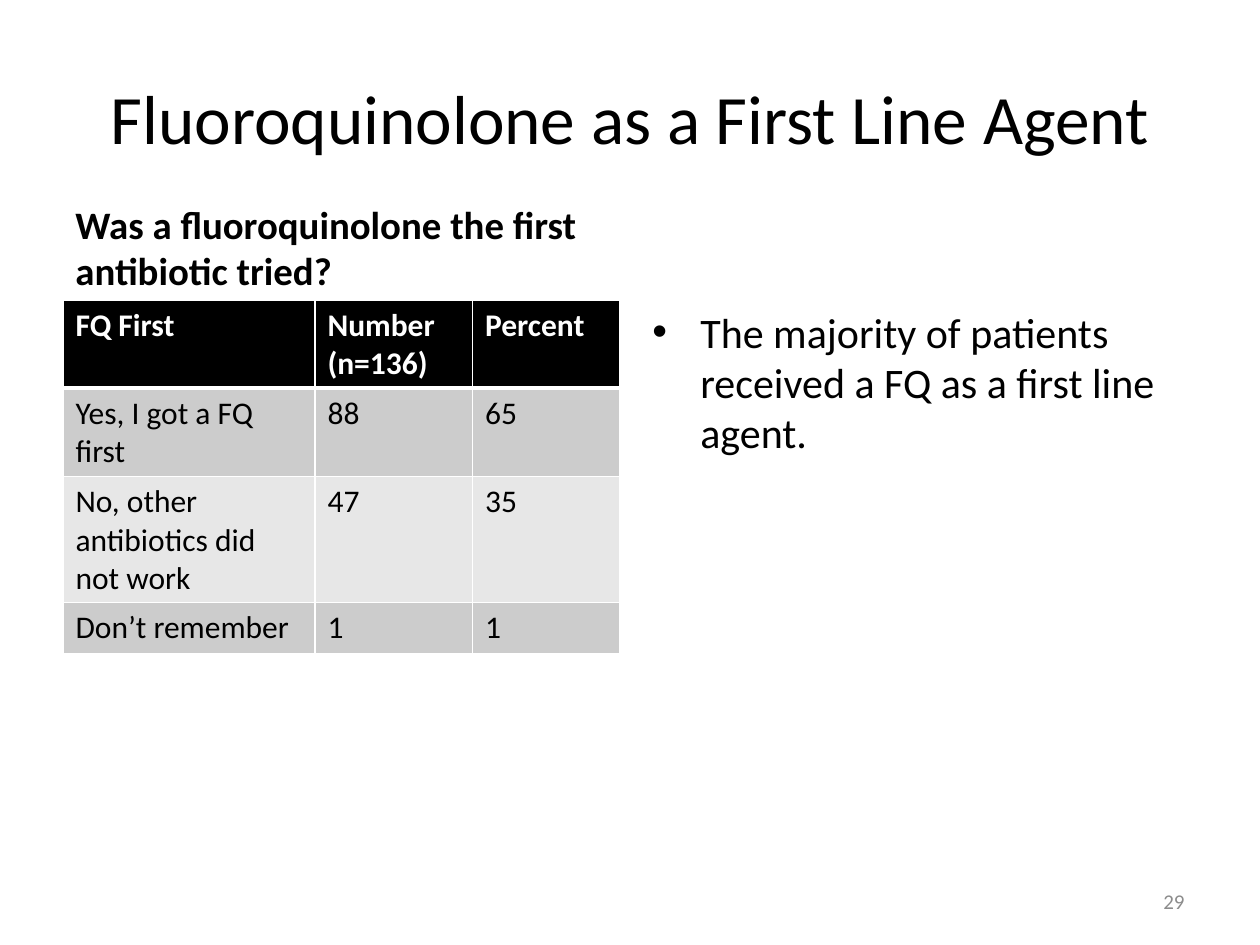
from lxml.etree import SubElement
from pptx import Presentation
from pptx.dml.color import RGBColor
from pptx.enum.text import MSO_ANCHOR, PP_ALIGN
from pptx.oxml import parse_xml
from pptx.oxml.ns import nsdecls, qn
from pptx.util import Inches, Pt

FONT = "Calibri"
WIDE, HIGH = 10, 7.5
EDGE, GAP = 0.5, 0.16
HALF = (WIDE - 2 * EDGE - GAP) / 2
TOP = 2.38
COLS = [2, 1.25, 1.17]
ROW = 0.41
ROWS = [
    ["FQ First", "Number (n=136)", "Percent"],
    ["Yes, I got a FQ first", "88", "65"],
    ["No, other antibiotics did not work", "47", "35"],
    ["Don’t remember", "1", "1"],
]


def color(code):
    """Turn a hex string into a colour."""
    return RGBColor.from_string(code)


def add_run(para, text, size, code="000000", bold=False):
    """Add one styled run to a paragraph."""
    run = para.add_run()
    run.text = text
    font = run.font
    font.name, font.size, font.bold = FONT, Pt(size), bold
    font.color.rgb = color(code)


def add_text(slide, box, text, size, code="000000", bold=False,
             align=PP_ALIGN.LEFT, anchor=MSO_ANCHOR.TOP):
    """Place a wrapped text box and return its paragraph."""
    frame = slide.shapes.add_textbox(*map(Inches, box)).text_frame
    frame.word_wrap = True
    frame.vertical_anchor = anchor
    para = frame.paragraphs[0]
    para.alignment = align
    add_run(para, text, size, code, bold)
    return para


def add_point(slide, box, text):
    """Place a bulleted paragraph with a hanging indent."""
    props = add_text(slide, box, text, 24)._p.get_or_add_pPr()
    props.set("marL", str(Inches(0.38)))
    props.set("indent", str(-Inches(0.38)))
    SubElement(props, qn("a:buFont")).set("typeface", "Arial")
    SubElement(props, qn("a:buChar")).set("char", "•")


def add_rules(cell, head):
    """Draw white borders round a cell, thicker below the header."""
    props = cell._tc.get_or_add_tcPr()
    for spot, side in enumerate("LRTB"):
        width = Pt(3 if head and side == "B" else 1)
        props.insert(spot, parse_xml(
            f'<a:ln{side} {nsdecls("a")} w="{width}"><a:solidFill>'
            f'<a:srgbClr val="FFFFFF"/></a:solidFill></a:ln{side}>'))


def add_grid(slide, box):
    """Place the answer table in the given box."""
    table = slide.shapes.add_table(
        len(ROWS), len(COLS), *map(Inches, box)).table
    for col, width in zip(table.columns, COLS):
        col.width = Inches(width)
    for i, (row, words) in enumerate(zip(table.rows, ROWS)):
        row.height = Inches(ROW)
        head = i == 0
        fill = "000000" if head else "CCCCCC" if i % 2 else "E7E7E7"
        for cell, text in zip(row.cells, words):
            cell.fill.solid()
            cell.fill.fore_color.rgb = color(fill)
            add_rules(cell, head)
            add_run(cell.text_frame.paragraphs[0], text, 18,
                    "FFFFFF" if head else "000000", head)


def add_left(slide, box):
    """Place the question above its table."""
    left, top, width, height = box
    add_text(slide, (left, top - 0.7, width, 0.7),
             "Was a fluoroquinolone the first antibiotic tried?",
             22.2, bold=True, anchor=MSO_ANCHOR.BOTTOM)
    add_grid(slide, (left, top, width, height))


def main():
    """Build and save the slide."""
    deck = Presentation()
    deck.slide_width, deck.slide_height = Inches(WIDE), Inches(HIGH)
    slide = deck.slides.add_slide(deck.slide_layouts[6])
    add_text(slide, (EDGE, 0.3, WIDE - 2 * EDGE, 1.25),
             "Fluoroquinolone as a First Line Agent", 39.6,
             align=PP_ALIGN.CENTER, anchor=MSO_ANCHOR.MIDDLE)
    add_left(slide, (EDGE, TOP, HALF, ROW * len(ROWS)))
    add_point(slide, (EDGE + HALF + GAP, TOP, HALF, 4.32),
              "The majority of patients received a FQ as a first line agent.")
    add_text(slide, (7.17, 6.95, 2.33, 0.4), "29", 12, "8C8C8C",
             align=PP_ALIGN.RIGHT, anchor=MSO_ANCHOR.MIDDLE)
    deck.save("out.pptx")


if __name__ == "__main__":
    main()
